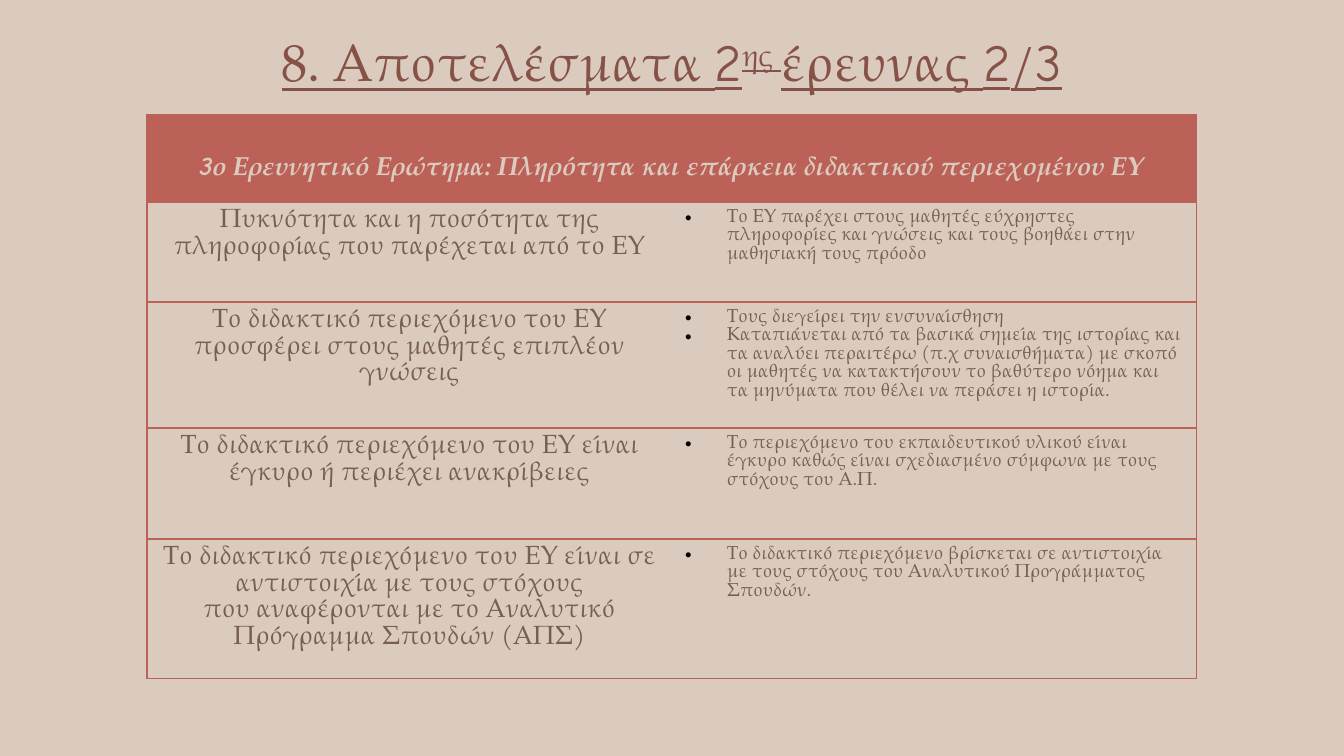
from lxml.etree import SubElement
from pptx import Presentation
from pptx.dml.color import RGBColor
from pptx.enum.text import MSO_ANCHOR, MSO_AUTO_SIZE, PP_ALIGN
from pptx.oxml.ns import qn
from pptx.util import Cm, Pt

SAND = RGBColor(0xDB, 0xCA, 0xBE)
WINE = RGBColor(0x86, 0x51, 0x47)
CORAL = RGBColor(0xBC, 0x61, 0x57)
BROWN = RGBColor(0x78, 0x60, 0x4F)
BLACK = RGBColor(0, 0, 0)
SERIF, ROUND = "TeX Gyre Pagella", "Comic Neue"

TITLE = [("8. Αποτελέσματα ", SERIF, 0), ("2", ROUND, 0), ("ης ", SERIF, 30),
         ("έρευνας ", SERIF, 0), ("2", ROUND, 0), ("/", SERIF, 0), ("3", ROUND, 0)]
HEADER = [("3", ROUND), ("ο Ερευνητικό Ερώτημα: Πληρότητα και επάρκεια "
                         "διδακτικού περιεχομένου ΕΥ", SERIF)]
# Row height in cm, criterion lines, findings
ROWS = [
    (1.89, ["Πυκνότητα και η ποσότητα της", "πληροφορίας που παρέχεται από το ΕΥ"],
     ["Το ΕΥ παρέχει στους μαθητές εύχρηστες πληροφορίες και γνώσεις και τους "
      "βοηθάει στην μαθησιακή τους πρόοδο"]),
    (2.38, ["Το διδακτικό περιεχόμενο του ΕΥ προσφέρει στους μαθητές επιπλέον", "γνώσεις"],
     ["Τους διεγείρει την ενσυναίσθηση",
      "Καταπιάνεται από τα βασικά σημεία της ιστορίας και τα αναλύει περαιτέρω "
      "(π.χ συναισθήματα) με σκοπό οι μαθητές να κατακτήσουν το βαθύτερο νόημα "
      "και τα μηνύματα που θέλει να περάσει η ιστορία."]),
    (2.1, ["Το διδακτικό περιεχόμενο του ΕΥ είναι έγκυρο ή περιέχει ανακρίβειες"],
     ["Το περιεχόμενο του εκπαιδευτικού υλικού είναι έγκυρο καθώς είναι "
      "σχεδιασμένο σύμφωνα με τους στόχους του Α.Π."]),
    (2.63, ["Το διδακτικό περιεχόμενο του ΕΥ είναι σε αντιστοιχία με τους στόχους",
            "που αναφέρονται με το Αναλυτικό Πρόγραμμα Σπουδών (ΑΠΣ)"],
     ["Το διδακτικό περιεχόμενο βρίσκεται σε αντιστοιχία με τους στόχους του "
      "Αναλυτικού Προγράμματος Σπουδών."]),
]
HEADER_HEIGHT = 1.66


def add_text(p, text, size, color, font=SERIF, bold=False, italic=False,
             underline=False, baseline=0):
    r = p.add_run()
    r.text = text
    f = r.font
    f.name, f.size, f.color.rgb = font, Pt(size), color
    f.bold, f.italic, f.underline = bold, italic, underline
    if baseline:
        f._element.set("baseline", str(baseline * 1000))


def add_bullet(p, indent=Cm(0.79)):
    pPr = p._p.get_or_add_pPr()
    pPr.set("marL", str(indent))
    pPr.set("indent", str(-indent))
    color = SubElement(pPr, qn("a:buClr"))
    SubElement(color, qn("a:srgbClr"), val=str(BLACK))
    SubElement(pPr, qn("a:buFont"), typeface="Arial")
    SubElement(pPr, qn("a:buChar"), char="•")


def format_cell(cell, sides, fill=None):
    """Draw the named sides (of L, R, T, B), clear the others, and set the fill."""
    tcPr = cell._tc.get_or_add_tcPr()
    for side in "LRTB":
        ln = SubElement(tcPr, qn(f"a:ln{side}"), w=str(Pt(0.75)))
        if side in sides:
            solid = SubElement(ln, qn("a:solidFill"))
            SubElement(solid, qn("a:srgbClr"), val=str(CORAL))
        else:
            SubElement(ln, qn("a:noFill"))
    if fill is None:
        cell.fill.background()
    else:
        cell.fill.solid()
        cell.fill.fore_color.rgb = fill


def fill_paragraphs(cell, lines, size, bulleted=False):
    tf = cell.text_frame
    for i, line in enumerate(lines):
        p = tf.add_paragraph() if i else tf.paragraphs[0]
        if bulleted:
            add_bullet(p)
        else:
            p.alignment = PP_ALIGN.CENTER
        add_text(p, line, size, BROWN)


def place_title(slide, left, top, width, height):
    sp = slide.shapes.title
    sp.left, sp.top, sp.width, sp.height = left, top, width, height
    tf = sp.text_frame
    tf.auto_size = MSO_AUTO_SIZE.NONE
    tf.word_wrap = False
    tf.vertical_anchor = MSO_ANCHOR.TOP
    p = tf.paragraphs[0]
    p.alignment = PP_ALIGN.CENTER
    for text, font, baseline in TITLE:
        add_text(p, text, 28, WINE, font, underline=True, baseline=baseline)


def place_findings_table(slide, left, top, width):
    heights = [HEADER_HEIGHT] + [row[0] for row in ROWS]
    table = slide.shapes.add_table(len(heights), 2, left, top, width,
                                   Cm(sum(heights))).table
    table.first_row = table.horz_banding = False
    for row, height in zip(table.rows, heights):
        row.height = Cm(height)

    header = table.cell(0, 0)
    header.merge(table.cell(0, 1))
    format_cell(header, "LRTB", CORAL)
    format_cell(table.cell(0, 1), "RTB", CORAL)
    p = header.text_frame.paragraphs[0]
    p.alignment, p.line_spacing = PP_ALIGN.CENTER, 2.0
    for text, font in HEADER:
        add_text(p, text, 14, SAND, font, bold=True, italic=True)

    for i, (_, criterion, findings) in enumerate(ROWS, 1):
        format_cell(table.cell(i, 0), "LTB")
        format_cell(table.cell(i, 1), "RTB")
        fill_paragraphs(table.cell(i, 0), criterion, 14)
        fill_paragraphs(table.cell(i, 1), findings, 10, bulleted=True)


def main():
    prs = Presentation()
    prs.slide_width, prs.slide_height = Cm(25.4), Cm(14.29)
    slide = prs.slides.add_slide(prs.slide_layouts[5])
    slide.background.fill.solid()
    slide.background.fill.fore_color.rgb = SAND
    place_title(slide, Cm(5.03), Cm(0.43), Cm(15.34), Cm(1.45))
    place_findings_table(slide, Cm(2.78), Cm(2.16), Cm(19.83))
    prs.save("out.pptx")


if __name__ == "__main__":
    main()
